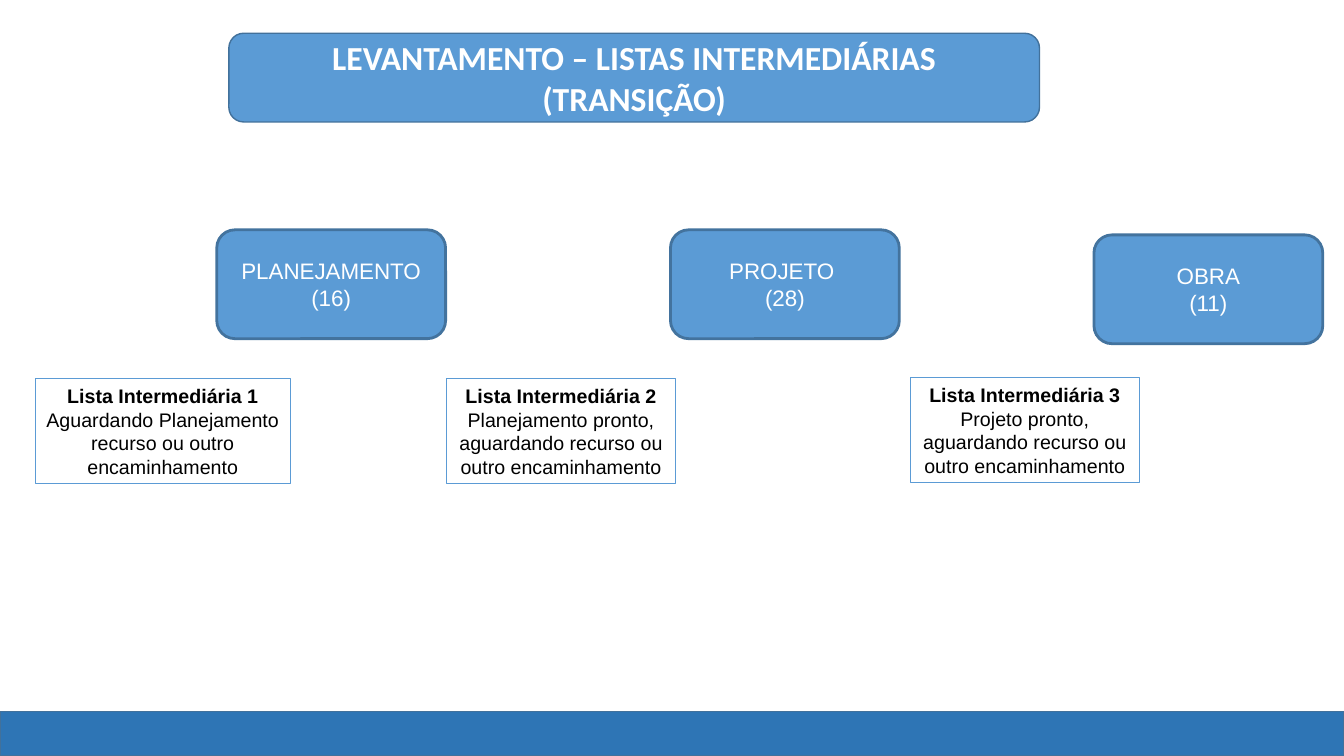
from pptx import Presentation
from pptx.dml.color import RGBColor
from pptx.enum.shapes import MSO_SHAPE
from pptx.enum.text import MSO_ANCHOR, PP_ALIGN
from pptx.util import Inches, Pt

RECT, ROUNDED = MSO_SHAPE.RECTANGLE, MSO_SHAPE.ROUNDED_RECTANGLE
TOP, MIDDLE = MSO_ANCHOR.TOP, MSO_ANCHOR.MIDDLE
CENTER = PP_ALIGN.CENTER

WHITE = RGBColor(0xFF, 0xFF, 0xFF)
BLACK = RGBColor(0x00, 0x00, 0x00)
BLUE = RGBColor(0x5B, 0x9B, 0xD5)
FOOTER_BLUE = RGBColor(0x2E, 0x75, 0xB5)
EDGE = RGBColor(0x42, 0x71, 0x9B)
STAGE_EDGE = RGBColor(0x43, 0x73, 0x9E)

WIDTH, HEIGHT = 13.33, 7.5
FOOTER_HEIGHT = 0.44

# left, top, lines
STAGES = [
    (2.15, 2.28, ["PLANEJAMENTO", "(16)"]),
    (6.65, 2.28, ["PROJETO ", "(28)"]),
    (10.85, 2.33, ["OBRA", "(11)"]),
]
# left, top, width, lines
LISTS = [
    (0.35, 3.76, 2.53, ["Lista Intermediária 1", "Aguardando Planejamento ",
                        "recurso ou outro encaminhamento"]),
    (4.43, 3.76, 2.27, ["Lista Intermediária 2",
                        "Planejamento pronto, aguardando recurso ou outro encaminhamento"]),
    (9.03, 3.75, 2.27, ["Lista Intermediária 3",
                        "Projeto pronto, aguardando recurso ou outro encaminhamento"]),
]


class Deck:
    def __init__(self):
        self.prs = Presentation()
        self.prs.slide_width, self.prs.slide_height = Inches(WIDTH), Inches(HEIGHT)
        self.s = self.prs.slides.add_slide(self.prs.slide_layouts[6])

    def shape(self, kind, box, fill, edge, weight):
        """Add a flat shape; a fill of None leaves it see-through."""
        sp = self.s.shapes.add_shape(kind, *map(Inches, box))
        sp.shadow.inherit = False
        if fill is None:
            sp.fill.background()
        else:
            sp.fill.solid()
            sp.fill.fore_color.rgb = fill
        sp.line.color.rgb = edge
        sp.line.width = Pt(weight)
        return sp

    def text(self, sp, lines, size, color, font="Arial", anchor=MIDDLE, bold_first=False):
        tf = sp.text_frame
        tf.word_wrap = True
        tf.vertical_anchor = anchor
        tf.text = "\n".join(lines)
        for i, p in enumerate(tf.paragraphs):
            p.alignment = CENTER
            for r in p.runs:
                r.font.name, r.font.size = font, Pt(size)
                r.font.bold = bold_first and i == 0
                r.font.color.rgb = color

    def footer(self):
        self.shape(RECT, (0, HEIGHT - FOOTER_HEIGHT, WIDTH, FOOTER_HEIGHT),
                   FOOTER_BLUE, EDGE, 1)

    def title(self, text):
        sp = self.shape(ROUNDED, (2.27, 0.33, 8.04, 0.88), BLUE, EDGE, 1)
        self.text(sp, [text], 24, WHITE, font="Calibri", bold_first=True)

    def stage(self, left, top, lines):
        sp = self.shape(ROUNDED, (left, top, 2.27, 1.08), BLUE, STAGE_EDGE, 2)
        self.text(sp, lines, 16, WHITE)

    def waiting_list(self, left, top, width, lines):
        sp = self.shape(RECT, (left, top, width, 1.04), None, BLUE, 0.75)
        self.text(sp, lines, 14, BLACK, anchor=TOP, bold_first=True)


def main():
    deck = Deck()
    deck.footer()
    deck.title("LEVANTAMENTO – LISTAS INTERMEDIÁRIAS (TRANSIÇÃO)")
    for stage in STAGES:
        deck.stage(*stage)
    for waiting in LISTS:
        deck.waiting_list(*waiting)
    deck.prs.save("out.pptx")


if __name__ == "__main__":
    main()
